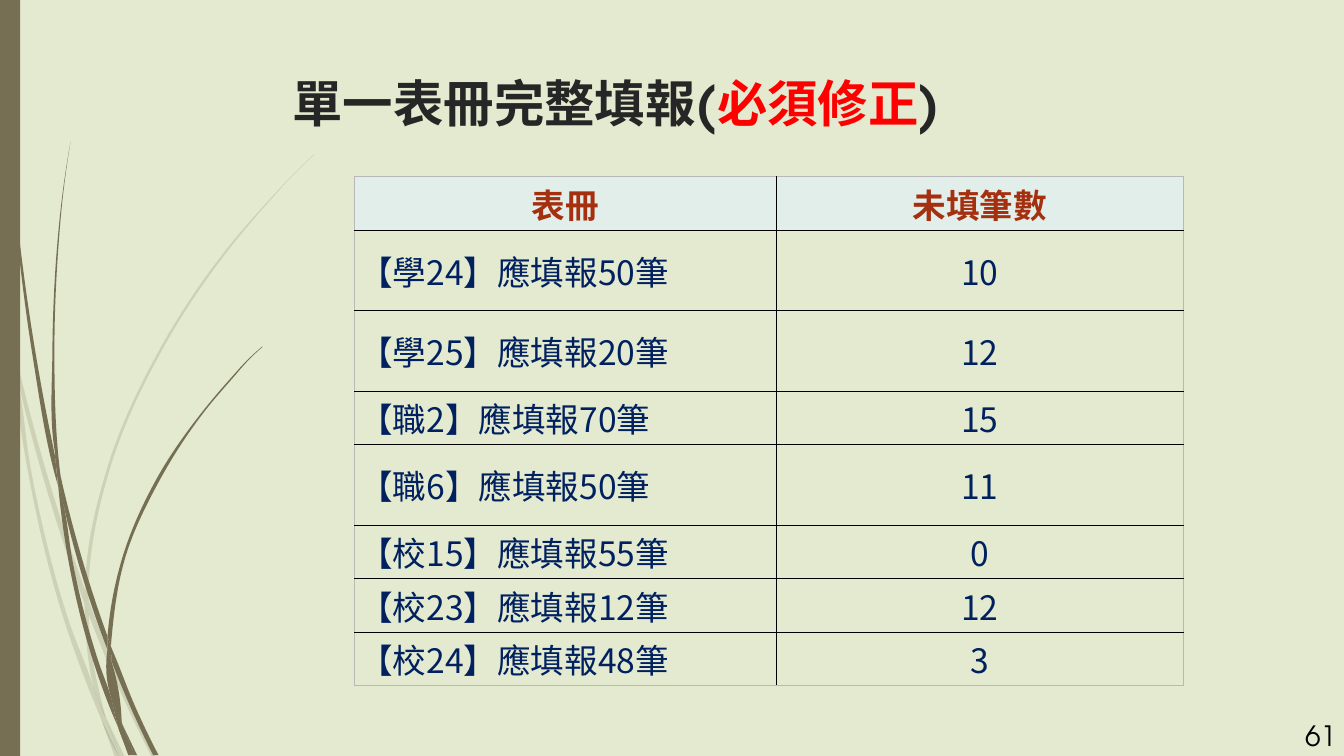
from math import dist
from lxml import etree
from pptx import Presentation, util as u
from pptx.dml.color import RGBColor
from pptx.enum import shapes, text
from pptx.oxml.ns import qn

CREAM = RGBColor(0xE3, 0xEA, 0xCF)
OLIVE = RGBColor(0x76, 0x6F, 0x54)
CHARCOAL = RGBColor(0x26, 0x26, 0x26)
RED = RGBColor(0xFF, 0x00, 0x00)
RUST = RGBColor(0xA5, 0x30, 0x10)
NAVY = RGBColor(0x00, 0x20, 0x60)
ICE = RGBColor(0xE1, 0xEE, 0xE9)
BLACK = RGBColor(0x00, 0x00, 0x00)
GREY = RGBColor(0xB8, 0xB8, 0xB8)
LATIN_FONT, CJK_FONT = "TeX Gyre Adventor", "Noto Sans CJK SC"

# Each blade of grass is a pair of edges, its points in hundredths of 2.54 cm.
BLADE_UNIT = u.Cm(0.0254)
PALE_BLADES = [
    ([(17, 525), (13, 483), (0, 422)], [(0, 449), (15, 516), (17, 525)]),
    ([(127, 879), (93, 780), (21, 518)], [(26, 564), (86, 782), (126, 899)]),
    ([(132, 894), (138, 910), (191, 1037), (232, 1127)], [(226, 1127), (184, 1040), (132, 915)]),
    ([(157, 1067), (186, 1127)], [(179, 1127)]),
    ([(17, 525), (26, 564), (47, 704), (104, 929), (139, 1024), (148, 1061), (151, 1071)],
     [(138, 1040), (98, 931), (42, 704), (17, 525)]),
    ([(126, 899), (130, 969), (139, 1024)],
     [(145, 1038), (157, 1067), (155, 1059), (136, 968), (132, 915)]),
    ([(468, 229), (434, 262), (402, 296), (341, 366), (237, 521), (161, 692), (127, 875), (127, 879)],
     [(132, 894), (132, 875), (165, 693), (240, 523), (343, 368), (403, 297), (434, 263), (468, 230)]),
    ([(151, 1071), (178, 1127)], [(171, 1127)]),
    ([(127, 879), (132, 894)], [(132, 916), (126, 899)]),
    ([(139, 1024), (157, 1067), (179, 1127)], [(178, 1127), (151, 1071), (148, 1061)]),
]
DARK_BLADES = [
    ([(4, 0), (5, 72), (10, 165), (25, 349), (49, 533), (84, 715), (86, 722)],
     [(82, 679), (54, 532), (28, 348), (12, 164), (7, 72), (5, 0)]),
    ([(90, 708), (139, 886), (160, 947)], [(160, 967), (132, 888), (96, 758)]),
    ([(165, 962), (170, 974), (204, 1058), (236, 1124)], [(228, 1124), (198, 1061), (166, 984)]),
    ([(86, 716), (96, 758), (108, 835), (147, 986), (165, 1037), (174, 1076), (176, 1083)],
     [(167, 1062), (140, 988), (102, 835), (86, 716)]),
    ([(105, 211), (93, 289), (85, 367), (78, 524), (82, 674), (89, 707)],
     [(90, 708), (87, 680), (81, 524), (87, 367), (94, 289), (105, 211)]),
    ([(182, 1078), (204, 1124)], [(200, 1124)]),
    ([(82, 674), (90, 708), (96, 758)], [(86, 716), (82, 680)]),
    ([(390, 516), (367, 537), (346, 560), (305, 608), (234, 711), (183, 827), (160, 947)],
     [(165, 962), (166, 950), (187, 828), (238, 714), (307, 609), (347, 562), (368, 538), (391, 516)]),
    ([(176, 1083), (196, 1124)], [(191, 1124)]),
    ([(160, 967), (165, 1037), (174, 1059), (182, 1078)], [(181, 1073), (166, 985), (163, 976)]),
    ([(160, 947), (165, 962)], [(166, 984), (163, 976), (160, 967)]),
    ([(165, 1037), (182, 1078), (200, 1124)], [(196, 1124), (176, 1083), (174, 1076)]),
]
TABLE_ROWS = [
    ("表冊", "未填筆數"), ("【學24】應填報50筆", "10"), ("【學25】應填報20筆", "12"),
    ("【職2】應填報70筆", "15"), ("【職6】應填報50筆", "11"), ("【校15】應填報55筆", "0"),
    ("【校23】應填報12筆", "12"), ("【校24】應填報48筆", "3"),
]
TALL_ROWS = {1, 2, 4}

def set_attributes(target, values):
    for name, value in values.items():
        setattr(target, name, value)

def add_run(paragraph, words, color, latin=LATIN_FONT, **font_values):
    run = paragraph.add_run()
    run.text = words
    set_attributes(run.font, {"name": latin, **font_values})
    run.font.color.rgb = color
    run.font._element.find(qn("a:latin")).addnext(etree.Element(qn("a:ea"), typeface=CJK_FONT))

def paint(shape, color, opacity=100):
    shape.shadow.inherit = False
    shape.fill.solid()
    shape.fill.fore_color.rgb = color
    shape.line.fill.background()
    if opacity < 100:
        color_element = shape._element.spPr.find(".//" + qn("a:srgbClr"))
        etree.SubElement(color_element, qn("a:alpha"), val=str(opacity * 1000))

def bezier_handles(points):
    """Return the two control points of each segment of a smooth curve through points."""
    if len(points) < 2:
        return []
    lengths = [dist(a, b) for a, b in zip(points, points[1:])]
    slopes = [((b[0] - a[0]) / h, (b[1] - a[1]) / h)
              for a, b, h in zip(points, points[1:], lengths)]
    inner = [tuple((p * h1 + q * h0) / (h0 + h1) for p, q in zip(s0, s1))
             for s0, s1, h0, h1 in zip(slopes, slopes[1:], lengths, lengths[1:])]
    tangents = [slopes[0], *inner, slopes[-1]]
    if inner:
        tangents[0] = tuple(2 * s - t for s, t in zip(slopes[0], inner[0]))
        tangents[-1] = tuple(2 * s - t for s, t in zip(slopes[-1], inner[-1]))
    return [(tuple(p + t * h / 3 for p, t in zip(points[i], tangents[i])),
             tuple(p - t * h / 3 for p, t in zip(points[i + 1], tangents[i + 1])))
            for i, h in enumerate(lengths)]

def add_blade(slide, left, top, edges):
    outline = [(left + x * BLADE_UNIT, top + y * BLADE_UNIT) for edge in edges for x, y in edge]
    builder = slide.shapes.build_freeform(*outline[0])
    builder.add_line_segments(outline[1:], close=True)
    shape = builder.convert_to_shape()
    handles = [*bezier_handles(edges[0]), (), *bezier_handles(edges[1])]
    for segment, pair in zip(shape._element.findall(".//" + qn("a:lnTo")), handles):
        if pair:
            segment.tag = qn("a:cubicBezTo")
        for i, (x, y) in enumerate(pair):
            segment.insert(i, etree.Element(
                qn("a:pt"), x=str(round(left + x * BLADE_UNIT - shape.left)),
                y=str(round(top + y * BLADE_UNIT - shape.top))))
    return shape

def add_grass(slide, left, top, blades, opacity):
    drawn = [add_blade(slide, left, top, edges) for edges in blades]
    for shape in drawn:
        paint(shape, OLIVE, opacity)
    slide.shapes.add_group_shape(drawn)

def add_side_bar(slide, left, top, width, height):
    paint(slide.shapes.add_shape(shapes.MSO_SHAPE.RECTANGLE, left, top, width, height), OLIVE)

def add_title(slide, left, top, width, height):
    title = slide.shapes.title
    set_attributes(title, {"left": left, "top": top, "width": width, "height": height})
    set_attributes(title.text_frame, {"word_wrap": True, "auto_size": text.MSO_AUTO_SIZE.NONE,
                                      "vertical_anchor": text.MSO_ANCHOR.TOP})
    paragraph = title.text_frame.paragraphs[0]
    paragraph.alignment = text.PP_ALIGN.LEFT
    for words, color in (("單一表冊完整填報(", CHARCOAL), ("必須修正", RED), (")", CHARCOAL)):
        add_run(paragraph, words, color, size=u.Pt(54), bold=True)

def add_border(cell, side, color, width):
    line = etree.SubElement(cell._tc.get_or_add_tcPr(), qn("a:ln" + side), w=str(width))
    fill = etree.SubElement(line, qn("a:solidFill"))
    etree.SubElement(fill, qn("a:srgbClr"), val=str(color))

def fill_cell(cell, words, is_header, is_centred):
    set_attributes(cell, {
        "margin_left": u.Cm(0.19), "margin_right": u.Cm(0.19), "margin_top": u.Cm(0.09),
        "margin_bottom": u.Cm(0.09), "vertical_anchor": text.MSO_ANCHOR.MIDDLE})
    if is_header:
        cell.fill.solid()
        cell.fill.fore_color.rgb = ICE
    else:
        cell.fill.background()
    paragraph = cell.text_frame.paragraphs[0]
    paragraph.alignment = text.PP_ALIGN.CENTER if is_centred else text.PP_ALIGN.LEFT
    add_run(paragraph, words, RUST if is_header else NAVY, CJK_FONT, size=u.Pt(36), bold=is_header)

def add_report_table(slide, left, top, column_widths):
    row_heights = [u.Cm(3.05 if i in TALL_ROWS else 1.65) for i in range(len(TABLE_ROWS))]
    table = slide.shapes.add_table(len(TABLE_ROWS), len(column_widths), left, top,
                                   sum(column_widths), sum(row_heights)).table
    set_attributes(table, {"first_row": False, "horz_banding": False})
    for column, width in zip(table.columns, column_widths):
        column.width = width
    for i, row in enumerate(TABLE_ROWS):
        table.rows[i].height = row_heights[i]
        for j, words in enumerate(row):
            cell = table.cell(i, j)
            outer_sides = {"L": j == 0, "R": j == len(row) - 1,
                           "T": i == 0, "B": i == len(TABLE_ROWS) - 1}
            for side, is_outer in outer_sides.items():
                add_border(cell, side, *((GREY, u.Pt(0.5)) if is_outer else (BLACK, u.Pt(1))))
            fill_cell(cell, words, i == 0, i == 0 or j > 0)

def add_page_number(slide, left, top, width, height):
    frame = slide.shapes.add_textbox(left, top, width, height).text_frame
    set_attributes(frame, {"word_wrap": True, "vertical_anchor": text.MSO_ANCHOR.MIDDLE})
    frame.paragraphs[0].alignment = text.PP_ALIGN.RIGHT
    add_run(frame.paragraphs[0], "61", BLACK, size=u.Pt(30))

def main():
    presentation = Presentation()
    set_attributes(presentation, {"slide_width": u.Cm(50.8), "slide_height": u.Cm(28.58)})
    slide = presentation.slides.add_slide(presentation.slide_layouts[5])
    slide.background.fill.solid()
    slide.background.fill.fore_color.rgb = CREAM
    add_grass(slide, 0, 0, PALE_BLADES, opacity=20)
    add_grass(slide, 0, 0, DARK_BLADES, opacity=100)
    add_side_bar(slide, 0, 0, u.Cm(0.76), presentation.slide_height)
    add_title(slide, u.Cm(10.8), u.Cm(2.59), u.Cm(37.13), u.Cm(5.33))
    add_report_table(slide, u.Cm(13.39), u.Cm(6.68), [u.Cm(15.95), u.Cm(15.4)])
    add_page_number(slide, u.Cm(47.5), u.Cm(27.05), u.Cm(3.25), u.Cm(1.52))
    presentation.save("out.pptx")

if __name__ == "__main__":
    main()
